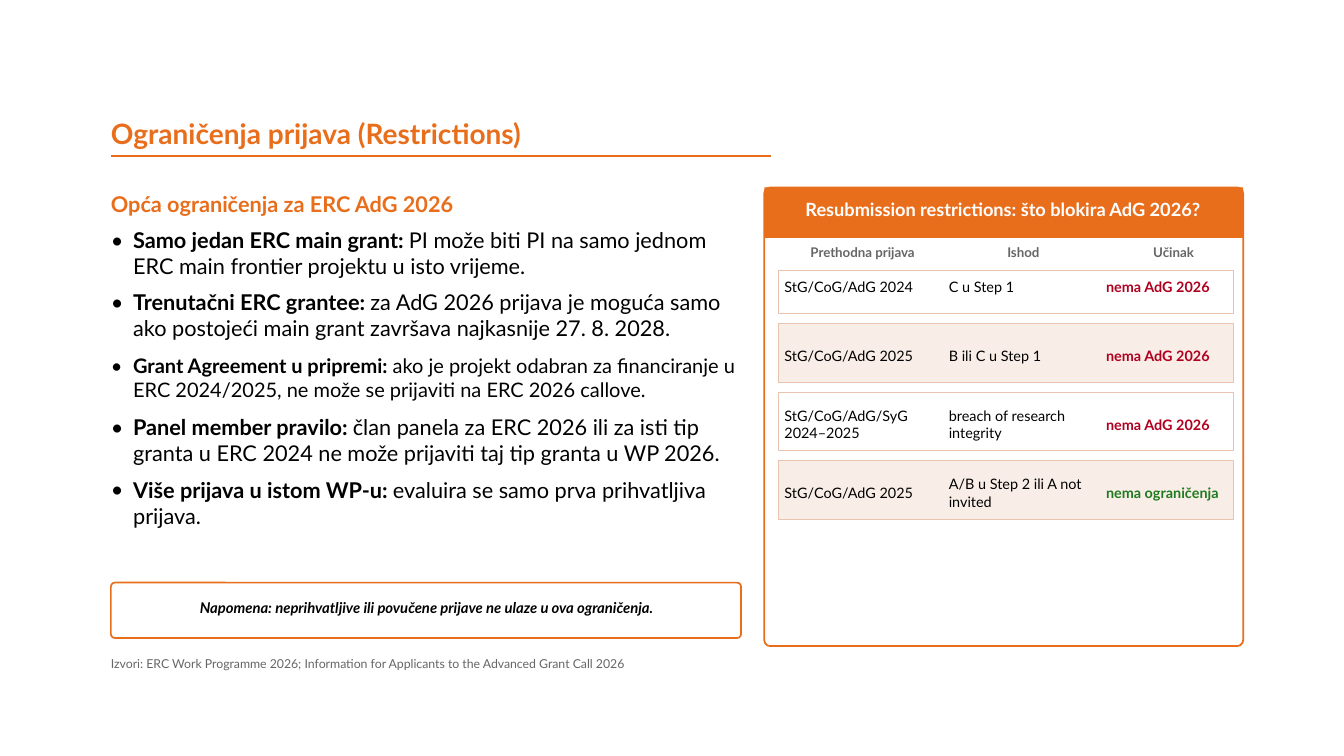
"""Build the slide on restrictions for ERC AdG 2026 applications."""
import pptx
import pptx.util
import pptx.dml.color
import pptx.enum.shapes
import pptx.enum.text
import pptx.oxml
import pptx.oxml.ns

Inches, Pt = pptx.util.Inches, pptx.util.Pt
SHAPES = pptx.enum.shapes.MSO_SHAPE
ALIGN = pptx.enum.text.PP_ALIGN
ANCHOR = pptx.enum.text.MSO_ANCHOR

FONT = "Lato"
ORANGE, WHITE, BLACK, GRAY = "E86E1C", "FFFFFF", "000000", "666666"
RED, GREEN, TINT, ROW_LINE = "B00020", "1F7A1F", "F9EEE7", "E8C4AF"

TITLE = "Ograničenja prijava (Restrictions)"
SUBTITLE = "Opća ograničenja za ERC AdG 2026"
RULES = [
    ("Samo jedan ERC main grant: ",
     "PI može biti PI na samo jednom ERC main frontier projektu u isto vrijeme.", 15.5),
    ("Trenutačni ERC grantee: ",
     "za AdG 2026 prijava je moguća samo ako postojeći main grant završava "
     "najkasnije 27. 8. 2028.", 15.5),
    ("Grant Agreement u pripremi: ",
     "ako je projekt odabran za financiranje u ERC 2024/2025, ne može se "
     "prijaviti na ERC 2026 callove.", 14.3),
    ("Panel member pravilo: ",
     "član panela za ERC 2026 ili za isti tip granta u ERC 2024 ne može "
     "prijaviti taj tip granta u WP 2026.", 15.5),
    ("Više prijava u istom WP-u: ",
     "evaluira se samo prva prihvatljiva prijava.", 15.5),
]
PANEL_TITLE = "Resubmission restrictions: što blokira AdG 2026?"
COLUMNS = [("Prethodna prijava", 7.78, 1.55), ("Ishod", 9.41, 1.48), ("Učinak", 10.97, 1.34)]
ROWS = [
    ("StG/CoG/AdG 2024", "C u Step 1", "nema AdG 2026", RED),
    ("StG/CoG/AdG 2025", "B ili C u Step 1", "nema AdG 2026", RED),
    ("StG/CoG/AdG/SyG 2024–2025", "breach of research integrity", "nema AdG 2026", RED),
    ("StG/CoG/AdG 2025", "A/B u Step 2 ili A not invited", "nema ograničenja", GREEN),
]
NOTE = "Napomena: neprihvatljive ili povučene prijave ne ulaze u ova ograničenja."
SOURCES = "Izvori: ERC Work Programme 2026; Information for Applicants to the Advanced Grant Call 2026"

LEFT = 1.1
ROW_PITCH, ROW_HEIGHT, FIRST_ROW_HEIGHT, FIRST_ROW_BOTTOM = 0.68, 0.58, 0.43, 3.11
RULE_PITCH, RULE_INDENT, LINE_FACTOR = 0.62, 0.22, 1.2


def color(value):
    return pptx.dml.color.RGBColor.from_string(value)


def add_run(paragraph, text, size, fill=BLACK, bold=False, italic=False):
    run = paragraph.add_run()
    run.text = text
    font = run.font
    font.name, font.size, font.bold, font.italic = FONT, Pt(size), bold, italic
    font.color.rgb = color(fill)


def prepare_frame(shape, anchor=ANCHOR.MIDDLE):
    frame = shape.text_frame
    frame.auto_size = pptx.enum.text.MSO_AUTO_SIZE.NONE
    frame.word_wrap = True
    frame.vertical_anchor = anchor
    frame.margin_left = frame.margin_right = frame.margin_top = frame.margin_bottom = 0
    return frame


def add_text(slide, box, text, size, fill=BLACK, bold=False, italic=False, align=ALIGN.LEFT):
    frame = prepare_frame(slide.shapes.add_textbox(*map(Inches, box)))
    paragraph = frame.paragraphs[0]
    paragraph.alignment = align
    add_run(paragraph, text, size, fill, bold, italic)


def add_box(slide, kind, box, fill, line=None, width=0, corner=None):
    shape = slide.shapes.add_shape(kind, *map(Inches, box))
    shape.shadow.inherit = False
    shape.fill.solid()
    shape.fill.fore_color.rgb = color(fill)
    if corner is not None:
        shape.adjustments[0] = corner
    if line:
        shape.line.color.rgb = color(line)
        shape.line.width = Pt(width)
    else:
        shape.line.fill.background()


def add_title(slide):
    title = slide.shapes.title
    title.left, title.top, title.width, title.height = map(Inches, (LEFT, 1.06, 7.95, 0.52))
    paragraph = prepare_frame(title).paragraphs[0]
    paragraph.alignment = ALIGN.LEFT
    add_run(paragraph, TITLE, 20, ORANGE, True)
    underline = slide.shapes.add_connector(
        pptx.enum.shapes.MSO_CONNECTOR.STRAIGHT, *map(Inches, (LEFT, 1.55, 7.65, 1.55)))
    underline.line.color.rgb = color(ORANGE)
    underline.line.width = Pt(1.5)
    properties = underline._element.spPr
    properties.append(properties.makeelement(pptx.oxml.ns.qn("a:effectLst"), {}))


def add_rules(slide):
    add_text(slide, (LEFT, 1.88, 5.85, 0.28), SUBTITLE, 15.5, ORANGE, True)
    box = slide.shapes.add_textbox(*map(Inches, (LEFT, 2.25, 6.32, 3.0)))
    frame = prepare_frame(box, ANCHOR.TOP)
    previous_size = None
    for label, text, size in RULES:
        if previous_size is None:
            paragraph = frame.paragraphs[0]
        else:
            paragraph = frame.add_paragraph()
            line_heights = LINE_FACTOR * (previous_size + size)
            paragraph.space_before = Pt(round(RULE_PITCH * 72 - line_heights, 1))
        properties = paragraph._p.get_or_add_pPr()
        indent = Inches(RULE_INDENT)
        properties.set("marL", str(indent))
        properties.set("indent", str(-indent))
        for tag, name, value in (("buFont", "typeface", FONT), ("buChar", "char", "•")):
            properties.append(properties.makeelement(pptx.oxml.ns.qn("a:" + tag), {name: value}))
        add_run(paragraph, label, size, bold=True)
        add_run(paragraph, text, size)
        previous_size = size


def add_panel(slide):
    add_box(slide, SHAPES.ROUNDED_RECTANGLE, (7.58, 1.86, 4.75, 4.55), WHITE, ORANGE, 1.25, 0.013)
    add_box(slide, SHAPES.RECTANGLE, (7.58, 1.86, 4.75, 0.5), ORANGE)
    add_text(slide, (7.77, 1.98, 4.35, 0.2), PANEL_TITLE, 13, WHITE, True, align=ALIGN.CENTER)
    for heading, left, width in COLUMNS:
        add_text(slide, (left, 2.4, width, 0.2), heading, 9.5, GRAY, True, align=ALIGN.CENTER)
    for index, (*cells, effect_color) in enumerate(ROWS):
        bottom = FIRST_ROW_BOTTOM + index * ROW_PITCH
        height = ROW_HEIGHT if index else FIRST_ROW_HEIGHT
        add_box(slide, SHAPES.RECTANGLE, (7.72, bottom - height, 4.51, height),
                TINT if index % 2 else WHITE, ROW_LINE, 0.5)
        for column, (text, (_, left, width)) in enumerate(zip(cells, COLUMNS)):
            is_effect = column == 2
            add_text(slide, (left, bottom - 0.53, width, 0.54), text, 10.3,
                     effect_color if is_effect else BLACK, is_effect)


def main():
    presentation = pptx.Presentation()
    presentation.slide_width, presentation.slide_height = Inches(13.33), Inches(7.5)
    slide = presentation.slides.add_slide(presentation.slide_layouts[5])
    add_title(slide)
    add_rules(slide)
    add_panel(slide)
    add_box(slide, SHAPES.ROUNDED_RECTANGLE, (LEFT, 5.78, 6.25, 0.55), WHITE, ORANGE, 1.2, 0.073)
    add_text(slide, (1.3, 5.95, 5.86, 0.16), NOTE, 10.6, BLACK, True, True, ALIGN.CENTER)
    add_text(slide, (LEFT, 6.47, 10.8, 0.22), SOURCES, 8.8, GRAY)
    presentation.save("out.pptx")


if __name__ == "__main__":
    main()
